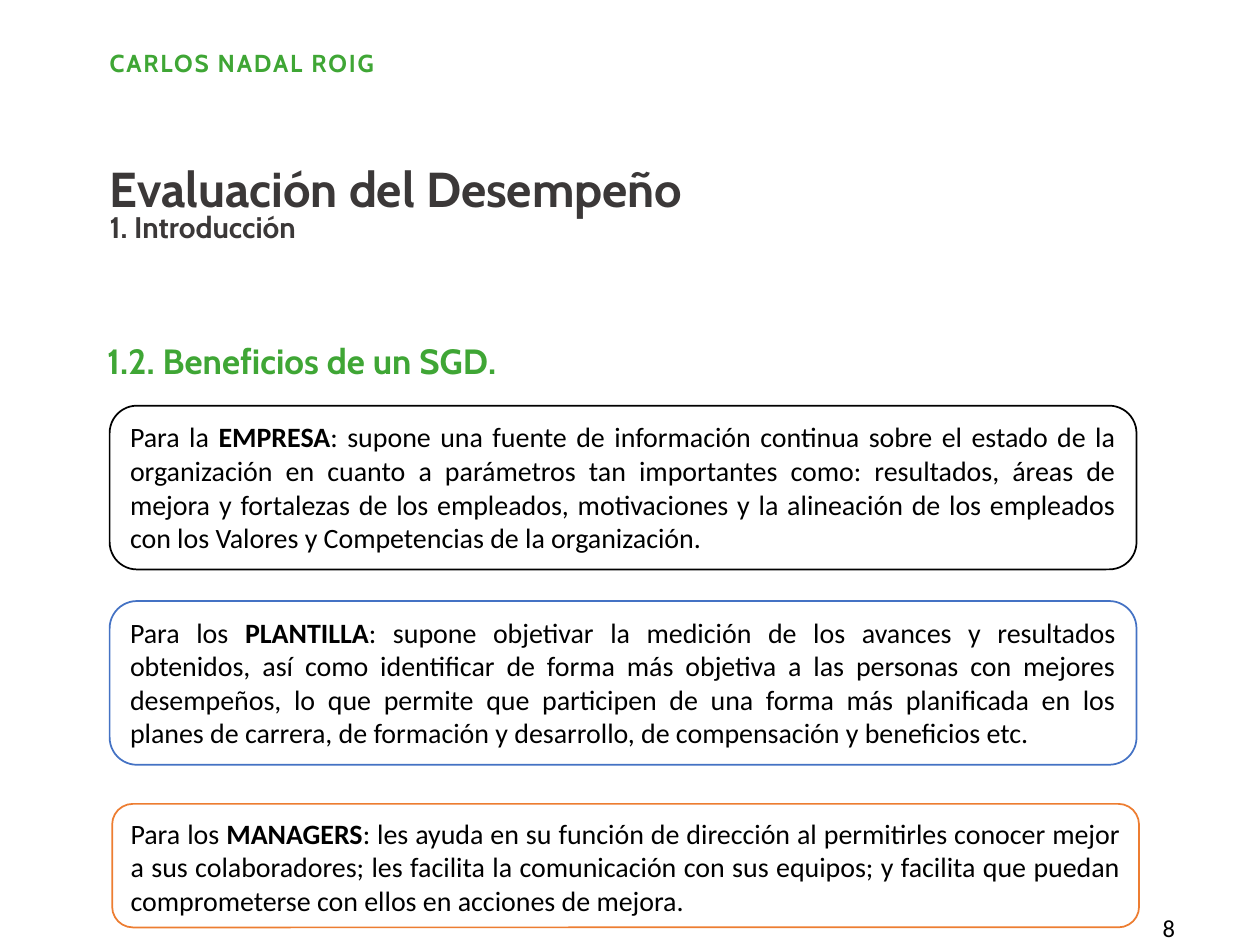
"""Build the slide on the benefits of a performance management system."""
from dataclasses import dataclass

from lxml import etree
from pptx import Presentation
from pptx import util as u
from pptx.dml.color import RGBColor
from pptx.enum import shapes, text
from pptx.oxml.ns import qn

GREEN = RGBColor(0x3F, 0xA6, 0x35)
CHARCOAL = RGBColor(0x3B, 0x38, 0x38)
BLACK = RGBColor(0, 0, 0)
WHITE = RGBColor(0xFF, 0xFF, 0xFF)
BLUE = RGBColor(0x44, 0x72, 0xC4)
ORANGE = RGBColor(0xED, 0x7D, 0x31)

WIDTH, HEIGHT = u.Inches(10), u.Inches(7.5)
COLUMN, ROW = WIDTH / 100, HEIGHT / 100


@dataclass(frozen=True)
class Area:
    """Position and size in hundredths of the slide."""
    left: float
    top: float
    width: float
    height: float

    def emu(self) -> tuple[int, int, int, int]:
        """Return left, top, width and height in EMU."""
        return (round(self.left * COLUMN), round(self.top * ROW),
                round(self.width * COLUMN), round(self.height * ROW))


@dataclass(frozen=True)
class Heading:
    """A heading held by a template placeholder."""
    slot: int
    area: Area
    wording: str
    size: int
    color: RGBColor
    tracking: int = 0
    anchor: text.MSO_ANCHOR = text.MSO_ANCHOR.TOP


@dataclass(frozen=True)
class Benefit:
    """A card with the benefits for one group."""
    area: Area
    opening: str
    group: str
    explanation: str
    outline: RGBColor


HEADINGS = [
    Heading(0, Area(8.5, 34, 82.8, 8.8), "1.2. Beneficios de un SGD.", 20, GREEN,
            anchor=text.MSO_ANCHOR.MIDDLE),
    Heading(1, Area(8.7, 5.47, 48.6, 2.93), "CARLOS NADAL ROIG", 14, GREEN, tracking=100),
    Heading(2, Area(8.7, 17.47, 49.9, 3.87), "Evaluación del Desempeño", 28, CHARCOAL),
    Heading(3, Area(8.7, 22.53, 42.5, 3.47), "1. Introducción", 17, CHARCOAL),
]

BENEFITS = [
    Benefit(Area(8.7, 42.93, 81.5, 17.33), "Para la ", "EMPRESA",
            ": supone una fuente de información continua sobre el estado de la organización "
            "en cuanto a parámetros tan importantes como: resultados, áreas de mejora y "
            "fortalezas de los empleados, motivaciones y la alineación de los empleados con "
            "los Valores y Competencias de la organización.", BLACK),
    Benefit(Area(8.7, 63.6, 81.5, 17.33), "Para los ", "PLANTILLA",
            ": supone objetivar la medición de los avances y resultados obtenidos, así como "
            "identificar de forma más objetiva a las personas con mejores desempeños, lo que "
            "permite que participen de una forma más planificada en los planes de carrera, de "
            "formación y desarrollo, de compensación y beneficios etc.", BLUE),
    Benefit(Area(8.9, 85.07, 81.5, 13.07), "Para los ", "MANAGERS",
            ": les ayuda en su función de dirección al permitirles conocer mejor a sus "
            "colaboradores; les facilita la comunicación con sus equipos; y facilita que "
            "puedan comprometerse con ellos en acciones de mejora.", ORANGE),
]


def write(paragraph, wording: str, *, size: int, color: RGBColor, font: str = "Calibri",
          bold: bool = False, tracking: int = 0) -> None:
    """Add one formatted run to a paragraph."""
    run = paragraph.add_run()
    run.text = wording
    run.font.name, run.font.size, run.font.bold = font, u.Pt(size), bold
    run.font.color.rgb = color
    if tracking:
        run._r.get_or_add_rPr().set("spc", str(tracking))


def place(shape, area: Area) -> None:
    """Move and size a shape."""
    shape.left, shape.top, shape.width, shape.height = area.emu()


def draw_heading(slide, heading: Heading) -> None:
    """Fill a placeholder with an unbulleted heading."""
    holder = slide.placeholders[heading.slot]
    place(holder, heading.area)
    frame = holder.text_frame
    frame.margin_left = frame.margin_top = frame.margin_right = frame.margin_bottom = 0
    frame.vertical_anchor = heading.anchor
    frame.auto_size = text.MSO_AUTO_SIZE.NONE
    frame.word_wrap = True
    paragraph = frame.paragraphs[0]
    properties = paragraph._p.get_or_add_pPr()
    properties.set("marL", "0")
    properties.set("indent", "0")
    etree.SubElement(properties, qn("a:buNone"))
    paragraph.alignment = text.PP_ALIGN.LEFT
    paragraph.line_spacing = 0.9
    paragraph.space_before = u.Pt(0)
    write(paragraph, heading.wording, size=heading.size, color=heading.color,
          font="Cabin", bold=True, tracking=heading.tracking)


def draw_benefit(slide, benefit: Benefit) -> None:
    """Draw a rounded card with its group name in bold."""
    card = slide.shapes.add_shape(shapes.MSO_SHAPE.ROUNDED_RECTANGLE, *benefit.area.emu())
    card.shadow.inherit = False
    card.fill.solid()
    card.fill.fore_color.rgb = WHITE
    card.line.color.rgb = benefit.outline
    card.line.width = u.Pt(1)
    frame = card.text_frame
    frame.word_wrap = True
    frame.vertical_anchor = text.MSO_ANCHOR.TOP
    paragraph = frame.paragraphs[0]
    paragraph.alignment = text.PP_ALIGN.JUSTIFY
    for wording in (benefit.opening, benefit.group, benefit.explanation):
        write(paragraph, wording, size=16, color=BLACK, bold=wording == benefit.group)


def draw_page_number(slide, number: int, area: Area) -> None:
    """Write the page number in the corner."""
    corner = slide.shapes.add_textbox(*area.emu())
    corner.text_frame.word_wrap = True
    write(corner.text_frame.paragraphs[0], str(number), size=14, color=BLACK)


def main() -> None:
    """Assemble and save the slide."""
    deck = Presentation()
    deck.slide_width, deck.slide_height = WIDTH, HEIGHT
    slide = deck.slides.add_slide(deck.slide_layouts.get_by_name("Comparison"))
    spare = slide.placeholders[4].element
    spare.getparent().remove(spare)
    draw_page_number(slide, 8, Area(91.3, 96, 6.4, 4))
    for heading in HEADINGS:
        draw_heading(slide, heading)
    for benefit in BENEFITS:
        draw_benefit(slide, benefit)
    deck.save("out.pptx")


if __name__ == "__main__":
    main()
